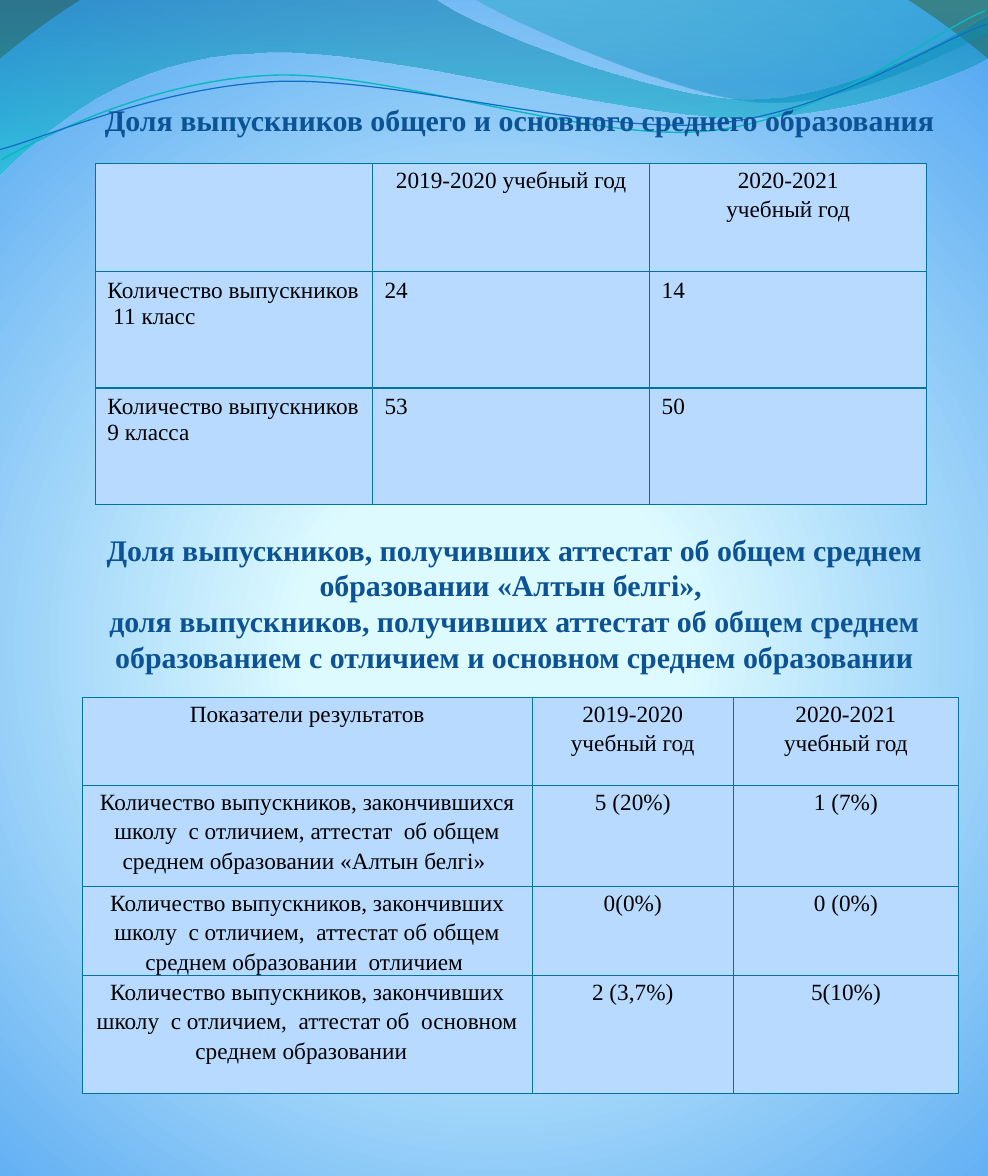
from dataclasses import dataclass

from pptx import Presentation
from pptx.dml.color import RGBColor
from pptx.enum.text import MSO_AUTO_SIZE, PP_ALIGN
from pptx.oxml import parse_xml
from pptx.oxml.ns import nsdecls, qn
from pptx.util import Cm, Pt

CENTER, LEFT = PP_ALIGN.CENTER, PP_ALIGN.LEFT


@dataclass(frozen=True)
class Theme:
    font: str = "Times New Roman"
    title_size: int = 18
    cell_size: int = 14
    title: str = "0B5394"
    text: str = "000000"
    cell: str = "B8DAFF"
    border: str = "0074A1"
    border_width: float = 0.75
    # Gradient stops: position in %, colour, opacity in %
    backdrop: tuple = ((25, "DDFAFF", 100), (100, "59AAF2", 100), (100, "52767C", 100))
    wide_wave: tuple = ((0, "0074A1", 45), (100, "00C6CF", 55))
    right_wave: tuple = ((0, "00A1A9", 30), (80, "008BBF", 45))
    teal_line: str = "0AB8BF"
    blue_line: str = "0F6FC6"


THEME = Theme()


def gradient_fill(stops, direction):
    """Return an a:gradFill element; direction is its a:lin or a:path XML."""
    marks = "".join(
        f'<a:gs pos="{place * 1000}"><a:srgbClr val="{colour}">'
        f'<a:alpha val="{opacity * 1000}"/></a:srgbClr></a:gs>'
        for place, colour, opacity in stops)
    return parse_xml(f'<a:gradFill {nsdecls("a")} rotWithShape="1">'
                     f'<a:gsLst>{marks}</a:gsLst>{direction}</a:gradFill>')


def write_lines(frame, lines, size, colour, bold=False, align=LEFT, spacing=1.0):
    for number, line in enumerate(lines):
        para = frame.paragraphs[0] if number == 0 else frame.add_paragraph()
        para.alignment = align
        para.line_spacing = spacing
        span = para.add_run()
        span.text = line
        span.font.name = THEME.font
        span.font.size = Pt(size)
        span.font.bold = bold
        span.font.color.rgb = RGBColor.from_string(colour)
        # The paragraph mark would otherwise make the last line 18 pt high
        para._p.append(parse_xml(f'<a:endParaRPr {nsdecls("a")} sz="{size * 100}"/>'))


deck = Presentation()
deck.slide_width, deck.slide_height = Cm(21), Cm(25)
page = deck.slides.add_slide(deck.slide_layouts[6])

# Background
backdrop = parse_xml(f'<p:bg {nsdecls("p", "a")}><p:bgPr><a:effectLst/></p:bgPr></p:bg>')
backdrop[0].insert(0, gradient_fill(
    THEME.backdrop,
    '<a:path path="circle"><a:fillToRect l="10000" t="110000" r="10000" b="100000"/></a:path>'))
page.element.cSld.insert(0, backdrop)

# Waves, in cm: a pair is a straight step, six numbers are a Bezier curve.
# A wave without line width is filled.
WAVES = [
    (THEME.wide_wave, None, [
        (-0.03, -0.03), (9.25, -0.03),
        (9.98, 0.56, 13.94, 2.11, 15.93, 2.11), (17.91, 2.11, 20.12, 0.86, 21.01, 0.3),
        (21.03, 1.22),
        (20.65, 1.47, 18.26, 2.51, 15.67, 2.51), (13.06, 2.51, 8.03, 0.94, 5.41, 1.14),
        (2.72, 1.19, 0.97, 2.77, -0.03, 3.76)]),
    (THEME.right_wave, None, [
        (10.06, -0.03),
        (10.69, 0.38, 14.33, 2.06, 16.15, 2.18), (17.96, 2.31, 20.19, 1.07, 21.01, 0.71),
        (21.01, 0)]),
    (THEME.teal_line, 0.85, [
        (0.03, 3.4),
        (1.02, 2.84, 3.3, 1.7, 5.79, 1.6), (8.28, 1.5, 12.47, 3.02, 14.99, 2.79),
        (17.5, 2.57, 19.69, 0.76, 20.93, 0.23)]),
    (THEME.blue_line, 0.75, [
        (0, 3.18),
        (0.99, 2.92, 3.43, 1.83, 5.94, 1.73), (8.46, 1.65, 12.57, 2.84, 15.06, 2.64),
        (17.58, 2.44, 19.76, 0.94, 20.98, 0.51)]),
]
for paint, line_width, steps in WAVES:
    corners = [(Cm(step[-2]), Cm(step[-1])) for step in steps]
    builder = page.shapes.build_freeform(*corners[0], scale=1.0)
    builder.add_line_segments(corners[1:], close=line_width is None)
    wave = builder.convert_to_shape()
    wave.shadow.inherit = False
    geometry = wave.element.spPr.find(qn("a:custGeom"))
    # Turn the straight segments that stand for curves into Bezier segments
    for segment, step in zip(list(geometry.iter(qn("a:lnTo"))), steps[1:]):
        if len(step) == 6:
            points = "".join(f'<a:pt x="{Cm(x) - wave.left}" y="{Cm(y) - wave.top}"/>'
                             for x, y in zip(step[::2], step[1::2]))
            curve = parse_xml(f'<a:cubicBezTo {nsdecls("a")}>{points}</a:cubicBezTo>')
            segment.getparent().replace(segment, curve)
    if line_width is None:
        wave.line.fill.background()
        geometry.addnext(gradient_fill(paint, '<a:lin ang="5400000" scaled="0"/>'))
    else:
        wave.fill.background()
        wave.line.color.rgb = RGBColor.from_string(paint)
        wave.line.width = Pt(line_width)

# Tables: left, top, column widths, row heights, number of centred rows, cells
YEAR_1, YEAR_2 = ["2019-2020 учебный год"], ["2020-2021", "учебный год"]
TABLES = [
    (1.75, 14.83, [9.56, 4.28, 4.78], [1.87, 2.15, 1.89, 2.5], 4, [
        [["Показатели результатов"], YEAR_1, YEAR_2],
        [["Количество выпускников, закончившихся школу  с отличием, аттестат  об общем "
          "среднем образовании «Алтын белгі» "], ["5 (20%)"], ["1 (7%)"]],
        [["Количество выпускников, закончивших школу  с отличием,  аттестат об общем "
          "среднем образовании  отличием "], ["0(0%)"], ["0 (0%)"]],
        [["Количество выпускников, закончивших школу  с отличием,  аттестат об  основном "
          "среднем образовании  "], ["2 (3,7%)"], ["5(10%)"]],
    ]),
    (2.03, 3.48, [5.89] * 3, [2.3, 2.47, 2.47], 1, [
        [[], YEAR_1, YEAR_2],
        [["Количество выпускников", " 11 класс"], ["24"], ["14"]],
        [["Количество выпускников", "9 класса"], ["53"], ["50"]],
    ]),
]
for left, top, widths, heights, centred_rows, rows in TABLES:
    table = page.shapes.add_table(len(heights), len(widths), Cm(left), Cm(top),
                                  Cm(sum(widths)), Cm(sum(heights))).table
    table.first_row = table.horz_banding = False
    for column, width in zip(table.columns, widths):
        column.width = Cm(width)
    for row_number, (row, height) in enumerate(zip(rows, heights)):
        table.rows[row_number].height = Cm(height)
        centred = row_number < centred_rows
        for column_number, lines in enumerate(row):
            cell = table.cell(row_number, column_number)
            cell.fill.solid()
            cell.fill.fore_color.rgb = RGBColor.from_string(THEME.cell)
            if centred:
                cell.margin_left = cell.margin_right = Cm(0.18)
                cell.margin_top = cell.margin_bottom = Cm(0)
            write_lines(cell.text_frame, lines, THEME.cell_size, THEME.text,
                        align=CENTER if centred else LEFT, spacing=1.15 if centred else 1.0)
            properties = cell._tc.get_or_add_tcPr()
            for place, side in enumerate(("lnL", "lnR", "lnT", "lnB")):
                properties.insert(place, parse_xml(
                    f'<a:{side} {nsdecls("a")} w="{Pt(THEME.border_width)}"><a:solidFill>'
                    f'<a:srgbClr val="{THEME.border}"/></a:solidFill></a:{side}>'))

# Headings: left, top, width, height, wrap, alignment, lines
HEADINGS = [
    (1.98, 11.17, 17.91, 3.33, True, CENTER,
     ["Доля выпускников, получивших аттестат об общем среднем образовании «Алтын белгі», ",
      "доля выпускников, получивших аттестат об общем среднем образованием с отличием "
      "и основном среднем образовании"]),
    (1.98, 2.03, 18.36, 1.02, False, LEFT,
     ["Доля выпускников общего и основного среднего образования"]),
]
for left, top, width, height, wrap, align, lines in HEADINGS:
    box = page.shapes.add_textbox(Cm(left), Cm(top), Cm(width), Cm(height))
    box.text_frame.word_wrap = wrap
    box.text_frame.auto_size = MSO_AUTO_SIZE.SHAPE_TO_FIT_TEXT
    write_lines(box.text_frame, lines, THEME.title_size, THEME.title, bold=True, align=align)

deck.save("out.pptx")
